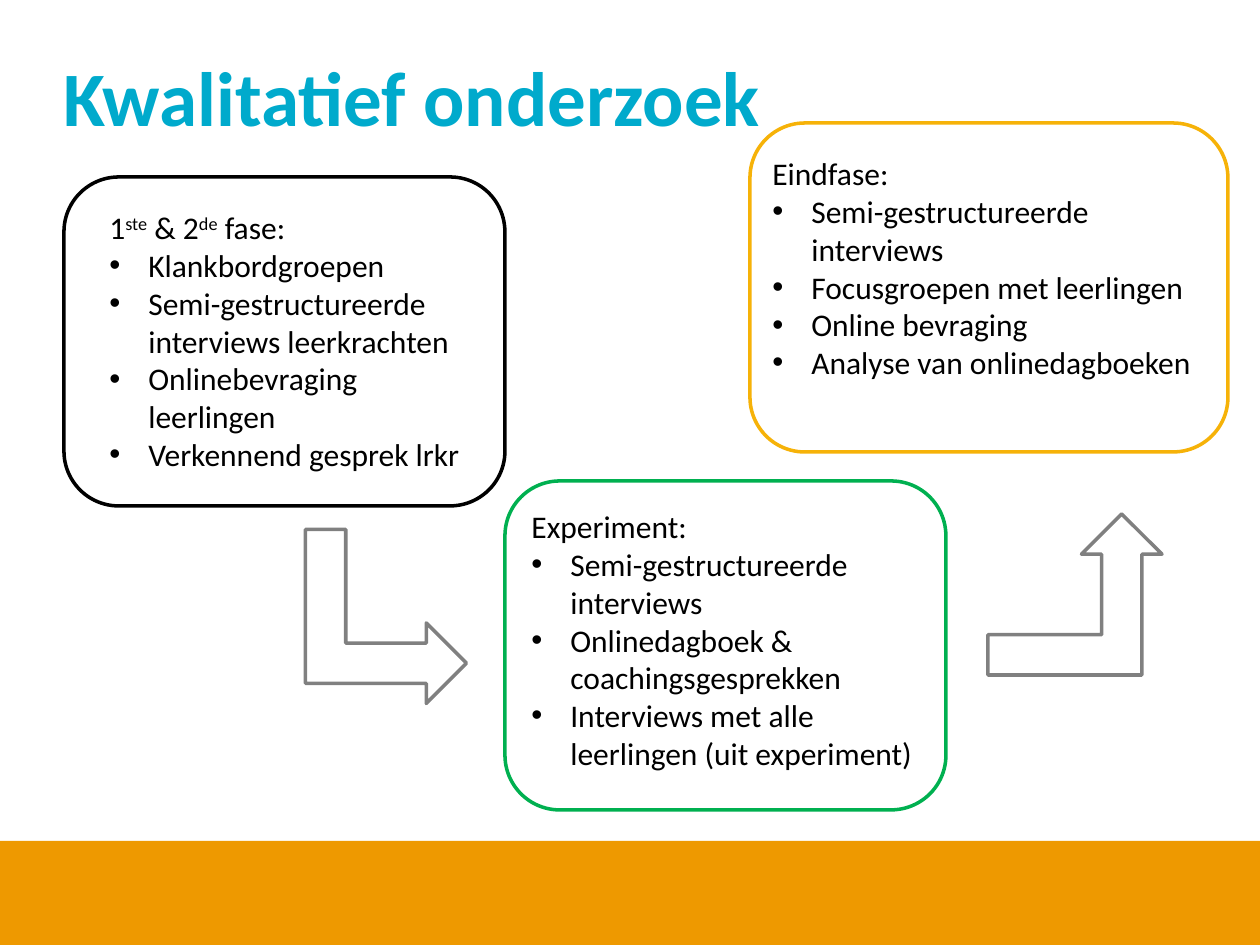
from lxml import etree
from pptx import Presentation
from pptx import util as u
from pptx.dml.color import RGBColor
from pptx.enum import shapes, text
from pptx.oxml.ns import qn

PX = 914400 / 126
FONT = "Calibri"
INDENT = 39
PHASE_HEIGHT = 329
LIST_HEIGHT = 280
COLORS = {
    "title": "00AACC",
    "band": "EE9900",
    "text": "000000",
    "start": "000000",
    "experiment": "00B050",
    "end": "F6B208",
    "arrow": "808080",
}
# Heading pieces are (text, is superscript); frames are left, top, width.
PHASES = [
    ("start", (64, 177, 441), (97, 202, 393),
     [("1", False), ("ste", True), (" & 2", False), ("de", True), (" fase:", False)],
     ["Klankbordgroepen", "Semi-gestructureerde interviews leerkrachten",
      "Onlinebevraging leerlingen", "Verkennend gesprek lrkr"]),
    ("experiment", (505, 481, 441), (519, 501, 412),
     [("Experiment:", False)],
     ["Semi-gestructureerde interviews", "Onlinedagboek & coachingsgesprekken",
      "Interviews met alle leerlingen (uit experiment)"]),
    ("end", (750, 123, 478), (760, 148, 469),
     [("Eindfase:", False)],
     ["Semi-gestructureerde interviews", "Focusgroepen met leerlingen",
      "Online bevraging", "Analyse van onlinedagboeken"]),
]


def px(*lengths):
    return [u.Emu(round(length * PX)) for length in lengths]


def color(key):
    return RGBColor.from_string(COLORS[key])


def style(paragraph, size, color_key, bold=False):
    font = paragraph.font
    font.name, font.size, font.bold = FONT, u.Pt(size), bold
    font.color.rgb = color(color_key)


def add_outline(slide, kind, frame, color_key):
    outline = slide.shapes.add_shape(kind, *px(*frame))
    outline.shadow.inherit = False
    outline.fill.background()
    outline.line.color.rgb = color(color_key)
    outline.line.width = u.Pt(2)
    return outline


def add_band(slide):
    band = slide.shapes.add_shape(shapes.MSO_SHAPE.RECTANGLE, *px(0, 841, 1260, 104))
    band.shadow.inherit = False
    band.fill.solid()
    band.fill.fore_color.rgb = color("band")
    band.line.fill.background()


def set_title(slide, wording):
    title = slide.shapes.title
    title.left, title.top, title.width, title.height = px(64, -15, 1131, 158)
    frame = title.text_frame
    frame.text = wording
    frame.auto_size = text.MSO_AUTO_SIZE.NONE
    frame.vertical_anchor = text.MSO_ANCHOR.BOTTOM
    frame.margin_left = frame.margin_top = frame.margin_right = frame.margin_bottom = 0
    heading = frame.paragraphs[0]
    heading.alignment = text.PP_ALIGN.LEFT
    heading.line_spacing = 0.9
    style(heading, 44, "title", bold=True)


def add_bullet(paragraph):
    properties = paragraph._p.get_or_add_pPr()
    indent = px(INDENT)[0]
    properties.set("marL", str(indent))
    properties.set("indent", str(-indent))
    etree.SubElement(properties, qn("a:buFont"), typeface="Arial")
    etree.SubElement(properties, qn("a:buChar"), char="•")


def add_phase_text(slide, frame, heading_pieces, methods):
    box = slide.shapes.add_textbox(*px(*frame, LIST_HEIGHT)).text_frame
    box.word_wrap = True
    box.auto_size = text.MSO_AUTO_SIZE.SHAPE_TO_FIT_TEXT
    heading = box.paragraphs[0]
    for piece, superscript in heading_pieces:
        run = heading.add_run()
        run.text = piece
        if superscript:
            run.font._element.set("baseline", "30000")
    for method in methods:
        item = box.add_paragraph()
        item.text = method
        add_bullet(item)
    for paragraph in box.paragraphs:
        style(paragraph, 18, "text")


def add_arrow(slide, left, top, rotation=0):
    arrow = add_outline(slide, shapes.MSO_SHAPE.BENT_UP_ARROW, (left, top, 174, 161), "arrow")
    arrow.rotation = rotation


def main():
    deck = Presentation()
    deck.slide_width, deck.slide_height = px(1260, 945)
    slide = deck.slides.add_slide(deck.slide_layouts.get_by_name("Title Only"))
    add_band(slide)
    set_title(slide, "Kwalitatief onderzoek")
    for color_key, outline, text_area, heading_pieces, methods in PHASES:
        add_outline(slide, shapes.MSO_SHAPE.ROUNDED_RECTANGLE,
                    (*outline, PHASE_HEIGHT), color_key)
        add_phase_text(slide, text_area, heading_pieces, methods)
    add_arrow(slide, 299, 536, rotation=90)
    add_arrow(slide, 988, 514)
    deck.save("out.pptx")


if __name__ == "__main__":
    main()
